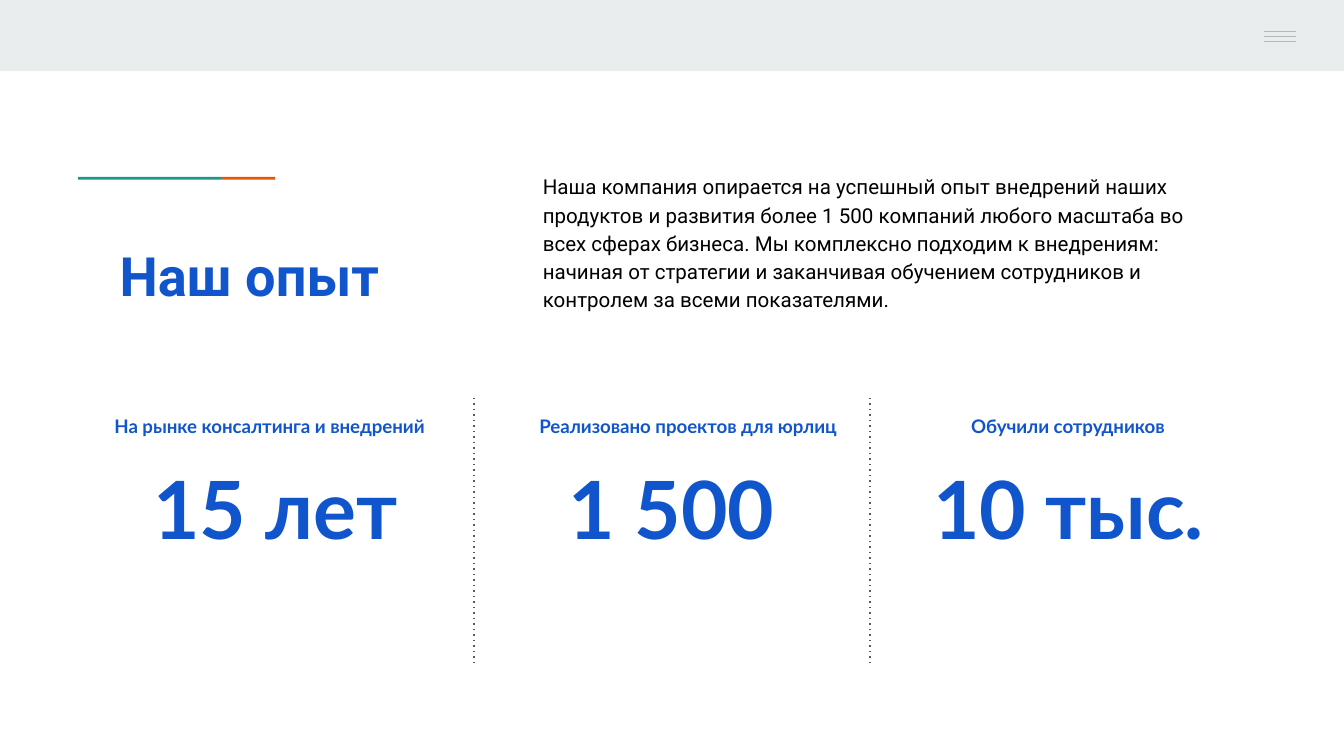
from lxml.etree import SubElement
from pptx import Presentation
from pptx.dml.color import RGBColor
from pptx.enum.shapes import MSO_CONNECTOR as Connector, MSO_SHAPE as Shape
from pptx.enum.text import MSO_ANCHOR as Anchor, MSO_AUTO_SIZE as AutoSize, PP_ALIGN as Align
from pptx.oxml.ns import qn
from pptx.util import Pt

COLORS = {
    "band": "E9EDEE",
    "teal": "1A9988",
    "orange": "EB5600",
    "menu": "B7B7B7",
    "divider": "595959",
    "blue": "1155CC",
    "black": "000000",
}
WIDTH, HEIGHT = 720, 405
INSET = 7.2

INTRO = (
    "Наша компания опирается на успешный опыт внедрений наших продуктов и развития "
    "более 1 500 компаний любого масштаба во всех сферах бизнеса. Мы комплексно "
    "подходим к внедрениям: начиная от стратегии и заканчивая обучением сотрудников "
    "и контролем за всеми показателями."
)

# Label, its left and width; figure, its left and width
FACTS = [
    ("На рынке консалтинга и внедрений", 50.4, 187.9, "15 лет", 56.9, 181.4),
    ("Реализовано проектов для юрлиц", 278.6, 180, "1 500", 261.4, 196.6),
    ("Обучили сотрудников", 502.6, 139, "10 тыс.", 471.6, 201.6),
]


def color(name):
    return RGBColor.from_string(COLORS[name])


def add_bar(slide, left, top, width, height, fill):
    bar = slide.shapes.add_shape(Shape.RECTANGLE, Pt(left), Pt(top), Pt(width), Pt(height))
    bar.shadow.inherit = False
    bar.fill.solid()
    bar.fill.fore_color.rgb = color(fill)
    bar.line.fill.background()


def add_line(slide, x1, y1, x2, y2, stroke, dash=None):
    line = slide.shapes.add_connector(Connector.STRAIGHT, Pt(x1), Pt(y1), Pt(x2), Pt(y2))
    line.line.color.rgb = color(stroke)
    line.line.width = Pt(0.75)
    properties = line._element.spPr
    if dash:
        SubElement(properties.find(qn("a:ln")), qn("a:prstDash"), val=dash)
    SubElement(properties, qn("a:effectLst"))


def write(shape, text, size, font, ink, bold=False, align=Align.LEFT):
    frame = shape.text_frame
    frame.word_wrap = True
    frame.auto_size = AutoSize.NONE
    frame.vertical_anchor = Anchor.TOP
    frame.margin_left = frame.margin_right = Pt(INSET)
    frame.margin_top = frame.margin_bottom = Pt(INSET)
    frame.text = text
    paragraph = frame.paragraphs[0]
    paragraph.alignment = align
    paragraph.font.size = Pt(size)
    paragraph.font.name = font
    paragraph.font.bold = bold
    paragraph.font.color.rgb = color(ink)
    return paragraph


def add_text(slide, left, top, width, height, *style, **options):
    box = slide.shapes.add_textbox(Pt(left), Pt(top), Pt(width), Pt(height))
    paragraph = write(box, *style, **options)
    paragraph.line_spacing = 1.15
    paragraph.space_after = Pt(16)


def add_header(slide, left, top, width, height):
    add_bar(slide, left, top, width, height, "band")
    # Menu icon
    right = left + width - 25.7
    for row in range(3):
        y = top + 16.9 + 2.6 * row
        add_line(slide, right - 17.3, y, right, y, "menu")


def add_heading(slide, left, top, width, height):
    # Two-colour accent
    add_bar(slide, left - 15.1, top - 27.6, 76.6, 1.5, "teal")
    add_bar(slide, left + 61.5, top - 27.6, 29, 1.5, "orange")
    title = slide.shapes.title
    title.left, title.top, title.width, title.height = map(Pt, (left, top, width, height))
    write(title, "Наш опыт", 29, "Roboto", "blue", bold=True)


def add_facts(slide, top, height):
    label_height = 18
    for label, label_left, label_width, figure, figure_left, figure_width in FACTS:
        add_text(slide, label_left, top, label_width, label_height,
                 label, 10, "Lato", "blue", bold=True, align=Align.CENTER)
        add_text(slide, figure_left, top + label_height, figure_width, 74.9,
                 figure, 43, "Lato", "blue", bold=True, align=Align.CENTER)
    # Dotted dividers
    for x in (254, 466):
        add_line(slide, x, top, x, top + height, "divider", dash="dot")


def main():
    presentation = Presentation()
    presentation.slide_width, presentation.slide_height = Pt(WIDTH), Pt(HEIGHT)
    slide = presentation.slides.add_slide(presentation.slide_layouts[5])
    add_header(slide, 0, 0, WIDTH, 38.2)
    add_heading(slide, 56.9, 122.4, 220.3, 63.4)
    add_text(slide, 283.7, 84.2, 378, 81.4, INTRO, 11, "Roboto", "black")
    add_facts(slide, 213.1, 144)
    presentation.save("out.pptx")


if __name__ == "__main__":
    main()
